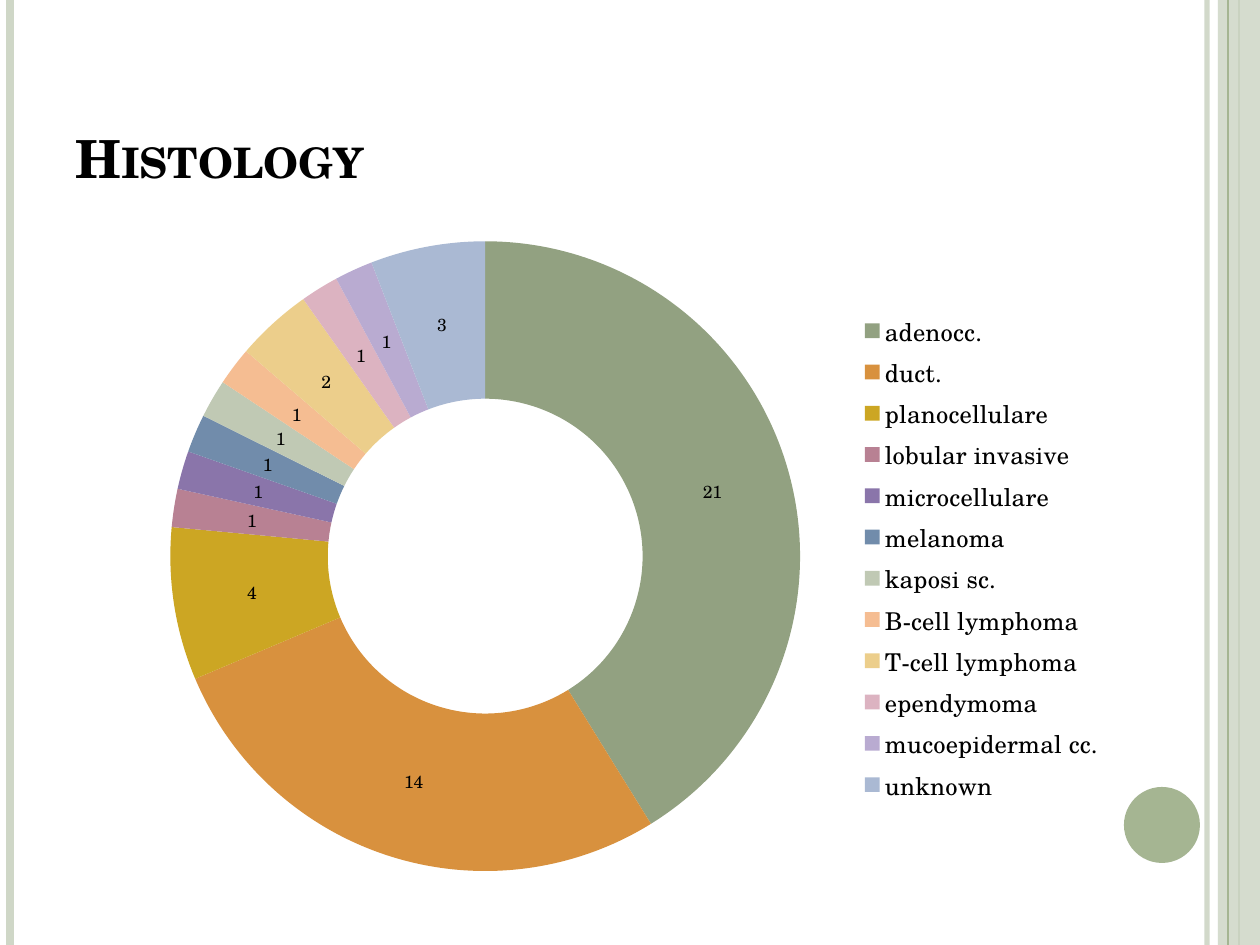
from dataclasses import dataclass
from pptx import Presentation
from pptx.chart.data import CategoryChartData as ChartData
from pptx.dml.color import RGBColor as RGB
from pptx.enum.chart import XL_CHART_TYPE as Chart, XL_LEGEND_POSITION as Legend
from pptx.enum.shapes import MSO_CONNECTOR as Conn, MSO_SHAPE as Shape
from pptx.enum.text import MSO_ANCHOR as Anchor, PP_ALIGN as Align
from pptx.oxml import parse_xml
from pptx.oxml.ns import nsdecls, qn
from pptx.util import Pt


def px(n):
    return round(n * 914400 / 126)


@dataclass(frozen=True)
class Theme:
    font: str = "TeX Gyre Schola"
    text: str = "000000"
    pale: str = "CFD7C7"
    green: str = "A5B592"
    title_size: int = 30
    legend_size: int = 14
    label_size: int = 10
    slices: tuple = (
        "92A181", "D8913E", "CCA623", "B88193", "8A75AA", "718CAB",
        "C0C9B4", "F5BD92", "ECCE8B", "DCB3C1", "B9ABD1", "AAB9D3",
    )


class SlideBuilder:
    def __init__(self, slide, theme):
        self.s, self.theme = slide, theme

    def style(self, font, size, **extra):
        fmt = {"name": self.theme.font, "size": Pt(size), **extra}
        for key, value in fmt.items():
            setattr(font, key, value)
        font.color.rgb = RGB.from_string(self.theme.text)

    def paint(self, fill, color, alpha=100):
        fill.solid()
        fill.fore_color.rgb = RGB.from_string(color)
        if alpha < 100:
            tag = f'<a:alpha {nsdecls("a")} val="{alpha * 1000}"/>'
            fill.fore_color._xFill.find(qn("a:srgbClr")).append(parse_xml(tag))

    def rule(self, x, color, weight, alpha=100):
        ln = self.s.shapes.add_connector(Conn.STRAIGHT, px(x), 0, px(x), px(945))
        ln.line.width = Pt(weight)
        self.paint(ln.line.fill, color, alpha)
        ln._element.spPr.append(parse_xml(f'<a:effectLst {nsdecls("a")}/>'))

    def shape(self, kind, box, color, alpha=100):
        sp = self.s.shapes.add_shape(kind, *map(px, box))
        sp.shadow.inherit = False
        sp.line.fill.background()
        self.paint(sp.fill, color, alpha)

    def title(self, text, box):
        sp = self.s.shapes.title
        for key, value in zip(("left", "top", "width", "height"), box):
            setattr(sp, key, px(value))
        tf = sp.text_frame
        tf.vertical_anchor = Anchor.BOTTOM
        p = tf.paragraphs[0]
        p.alignment = Align.LEFT
        r = p.add_run()
        r.text = text
        self.style(r.font, self.theme.title_size, bold=True)
        r.font._element.set("cap", "small")

    def layout(self, area, frame, inner=""):
        x, y, w, h = area
        left, top, width, height = frame
        parts = {
            "xMode": "edge", "yMode": "edge",
            "x": round((x - left) / width, 3), "y": round((y - top) / height, 3),
            "w": round(w / width, 3), "h": round(h / height, 3),
        }
        tags = "".join(f'<c:{k} val="{v}"/>' for k, v in parts.items())
        return parse_xml(
            f'<c:layout {nsdecls("c")}><c:manualLayout>{inner}{tags}'
            "</c:manualLayout></c:layout>"
        )

    def doughnut(self, counts, box, ring, key):
        data = ChartData()
        data.categories = list(counts)
        data.add_series("Series 1", list(counts.values()))
        chart = self.s.shapes.add_chart(Chart.DOUGHNUT, *map(px, box), data).chart
        chart.has_title = False
        self.style(chart.font, self.theme.label_size)

        chart.has_legend = True
        legend = chart.legend
        legend.position = Legend.RIGHT
        legend.include_in_layout = False
        self.style(legend.font, self.theme.legend_size)
        node = legend._element
        for old in node.findall(qn("c:layout")):
            node.remove(old)
        node.find(qn("c:legendPos")).addnext(self.layout(key, box))

        plot = chart.plots[0]
        plot.vary_by_categories = True
        plot._element.find(qn("c:holeSize")).set("val", "50")
        area = plot._element.getparent()
        for old in area.findall(qn("c:layout")):
            area.remove(old)
        area.insert(0, self.layout(ring, box, '<c:layoutTarget val="inner"/>'))

        series = plot.series[0]
        labels = series.data_labels
        labels.show_value = True
        self.style(labels.font, self.theme.label_size)
        for i, color in enumerate(self.theme.slices):
            fmt = series.points[i].format
            self.paint(fmt.fill, color)
            fmt.line.fill.background()


def main():
    prs = Presentation()
    prs.slide_width, prs.slide_height = px(1260), px(945)
    theme = Theme()
    s = SlideBuilder(prs.slides.add_slide(prs.slide_layouts[5]), theme)

    s.rule(1207, theme.pale, 3, alpha=93)
    s.rule(10, theme.pale, 4.5)
    s.rule(1239, theme.green, 1.5)
    s.shape(Shape.RECTANGLE, (1218, 0, 42, 945), theme.pale, alpha=87)
    s.rule(1228, theme.green, 0.75)
    s.shape(Shape.OVAL, (1124, 787, 76, 76), theme.green)

    s.title("Histology", (63, 38, 1029, 157))
    counts = {
        "adenocc.": 21, "duct.": 14, "planocellulare": 4, "lobular invasive": 1,
        "microcellulare": 1, "melanoma": 1, "kaposi sc.": 1, "B-cell lymphoma": 1,
        "T-cell lymphoma": 2, "ependymoma": 1, "mucoepidermal cc.": 1, "unknown": 3,
    }
    s.doughnut(counts, box=(115, 224, 1002, 665),
               ring=(170, 241, 630, 630), key=(858, 308, 246, 500))
    prs.save("out.pptx")


if __name__ == "__main__":
    main()
